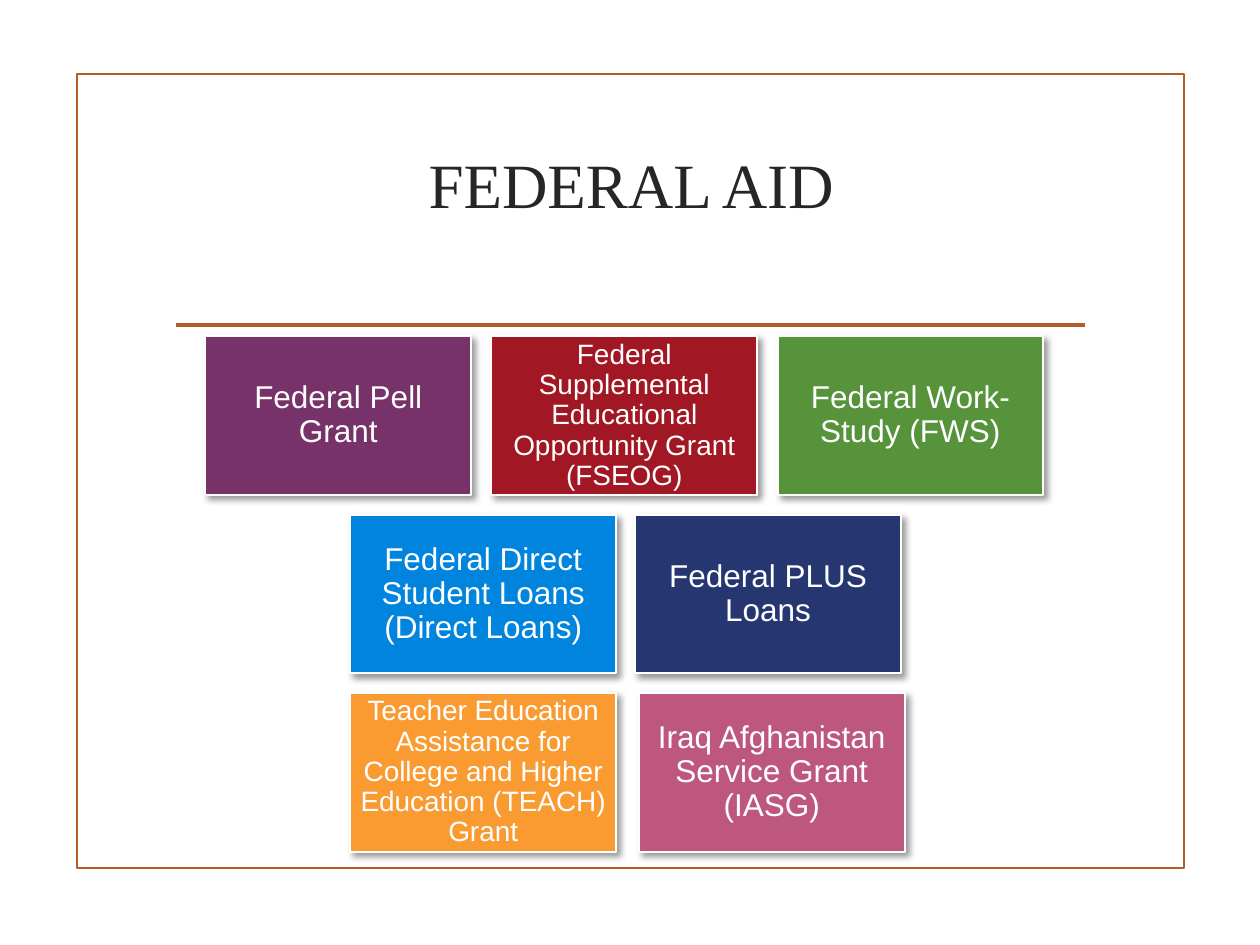
from lxml.etree import SubElement
from pptx import Presentation
from pptx.dml.color import RGBColor
from pptx.enum.shapes import MSO_CONNECTOR, MSO_SHAPE
from pptx.enum.text import MSO_ANCHOR, PP_ALIGN
from pptx.oxml import parse_xml
from pptx.oxml.ns import nsdecls, qn
from pptx.util import Inches, Pt

WHITE = RGBColor(0xFF, 0xFF, 0xFF)
INK = RGBColor(0x26, 0x26, 0x26)
RUST = RGBColor(0xB1, 0x5E, 0x28)
PLUM = RGBColor(0x76, 0x32, 0x69)
RED = RGBColor(0xA1, 0x17, 0x24)
GREEN = RGBColor(0x56, 0x93, 0x3B)
BLUE = RGBColor(0x00, 0x84, 0xDE)
NAVY = RGBColor(0x26, 0x36, 0x70)
AMBER = RGBColor(0xFA, 0x9B, 0x32)
PINK = RGBColor(0xBD, 0x57, 0x7E)

TITLE = "FEDERAL AID"
# Each row: left edge, step between cards, cards (text, fill, text size)
ROWS = [
    (1.63, 2.27, [
        ("Federal Pell Grant", PLUM, 18),
        ("Federal Supplemental Educational Opportunity Grant (FSEOG)", RED, 16),
        ("Federal Work-Study (FWS)", GREEN, 18),
    ]),
    (2.78, 2.26, [
        ("Federal Direct Student Loans (Direct Loans)", BLUE, 18),
        ("Federal PLUS Loans", NAVY, 18),
    ]),
    (2.78, 2.29, [
        ("Teacher Education Assistance for College and Higher Education "
         "(TEACH) Grant", AMBER, 16),
        ("Iraq Afghanistan Service Grant (IASG)", PINK, 18),
    ]),
]
TOP, PITCH = 2.67, 1.415
CARD_W, CARD_H, INSET = 2.11, 1.26, 0.07

SHADOW = (
    f'<a:effectLst {nsdecls("a")}>'
    f'<a:outerShdw blurRad="{Pt(4)}" dist="{Pt(3)}" dir="2700000" rotWithShape="0">'
    '<a:srgbClr val="000000"><a:alpha val="40000"/></a:srgbClr>'
    '</a:outerShdw></a:effectLst>'
)


def write(frame, text, font, size, color):
    frame.word_wrap = True
    frame.vertical_anchor = MSO_ANCHOR.MIDDLE
    para = frame.paragraphs[0]
    para.alignment = PP_ALIGN.CENTER
    run = para.add_run()
    run.text = text
    run.font.name = font
    run.font.size = Pt(size)
    run.font.color.rgb = color
    return para


def add_frame(slide):
    """Draw the page border and the rule under the title."""
    box = slide.shapes.add_shape(
        MSO_SHAPE.RECTANGLE, Inches(0.61), Inches(0.59), Inches(8.79), Inches(6.3))
    box.shadow.inherit = False
    box.fill.background()
    rule = slide.shapes.add_connector(
        MSO_CONNECTOR.STRAIGHT, Inches(1.4), Inches(2.58), Inches(8.61), Inches(2.58))
    SubElement(rule._element.spPr, qn("a:effectLst"))
    for item, width in ((box, 1.25), (rule, 2)):
        item.line.color.rgb = RUST
        item.line.width = Pt(width)


def add_card(slide, left, top, text, fill, size):
    card = slide.shapes.add_shape(
        MSO_SHAPE.RECTANGLE, Inches(left), Inches(top), Inches(CARD_W), Inches(CARD_H))
    card.fill.solid()
    card.fill.fore_color.rgb = fill
    card.line.color.rgb = WHITE
    card.line.width = Pt(1.25)
    card._element.spPr.append(parse_xml(SHADOW))
    frame = card.text_frame
    frame.margin_left = frame.margin_right = Inches(INSET)
    frame.margin_top = frame.margin_bottom = Inches(INSET)
    write(frame, text, "Arial", size, WHITE).line_spacing = 0.9


def main():
    deck = Presentation()
    deck.slide_width, deck.slide_height = Inches(10), Inches(7.5)
    slide = deck.slides.add_slide(deck.slide_layouts[5])
    add_frame(slide)

    for row, (left, step, cards) in enumerate(ROWS):
        for col, card in enumerate(cards):
            add_card(slide, left + col * step, TOP + row * PITCH, *card)

    title = slide.shapes.title
    title.left, title.top = Inches(1.29), Inches(1.08)
    title.width, title.height = Inches(7.44), Inches(0.75)
    write(title.text_frame, TITLE, "Times New Roman", 36, INK)
    deck.save("out.pptx")


if __name__ == "__main__":
    main()
